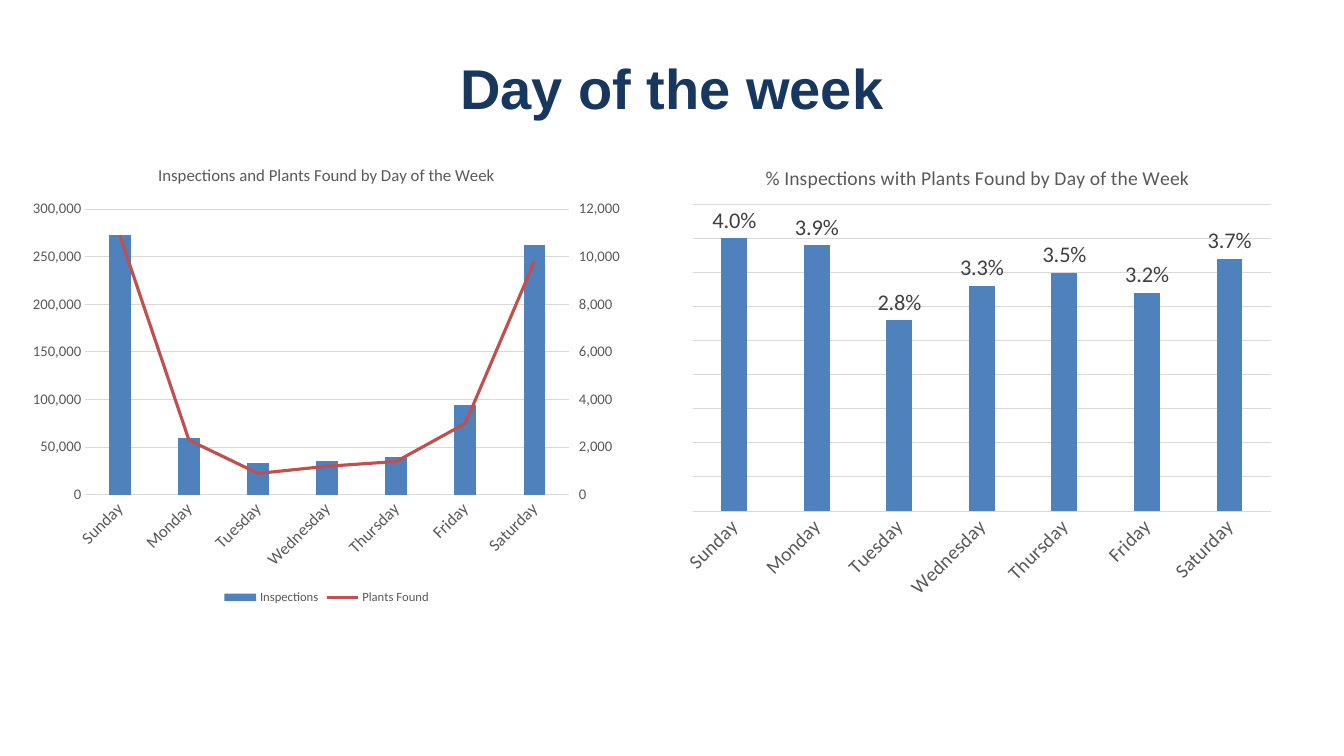
from copy import deepcopy
from lxml.etree import SubElement
from pptx import Presentation
from pptx.chart.data import CategoryChartData
from pptx.dml.color import RGBColor
from pptx.enum.chart import (XL_CHART_TYPE, XL_LABEL_POSITION, XL_LEGEND_POSITION,
                             XL_MARKER_STYLE, XL_TICK_MARK)
from pptx.enum.text import MSO_ANCHOR, PP_ALIGN
from pptx.oxml import parse_xml
from pptx.oxml.ns import nsdecls, qn
from pptx.util import Pt

DAYS = ["Sunday", "Monday", "Tuesday", "Wednesday", "Thursday", "Friday", "Saturday"]
COUNTS = {
    "Inspections": [273000, 60000, 33000, 36000, 40000, 94000, 262000],
    "Plants Found": [10900, 2300, 900, 1200, 1400, 3000, 9800],
}
RATES = {"Series 1": [0.04, 0.039, 0.028, 0.033, 0.035, 0.032, 0.037]}
NAVY, BLUE, RED = "17375E", "4F81BD", "C0504D"
GRAY, DARK, PALE = "595959", "404040", "D9D9D9"


def rgb(code):
    return RGBColor.from_string(code)


def style(font, size, color, name="Calibri", bold=False):
    font.size, font.name, font.bold = Pt(size), name, bold
    font.color.rgb = rgb(color)


def rule(line, color, width):
    line.color.rgb = rgb(color)
    line.width = Pt(width)


def scale(axis, top, step):
    axis.minimum_scale, axis.maximum_scale, axis.major_unit = 0, top, step


def drop(node, tag):
    for child in node.findall(qn(tag)):
        node.remove(child)


def add_title(slide, box, text):
    frame = slide.shapes.add_textbox(*map(Pt, box)).text_frame
    frame.word_wrap = True
    frame.vertical_anchor = MSO_ANCHOR.MIDDLE
    para = frame.paragraphs[0]
    para.alignment = PP_ALIGN.CENTER
    run = para.add_run()
    run.text = text
    style(run.font, 40, NAVY, "Arial", True)


def place_plot(chart, area):
    """Fix the inner plot area as fractions of the chart."""
    plot = chart.element.find(".//" + qn("c:plotArea"))
    drop(plot, "c:layout")
    parts = "".join(f'<c:{key} val="{val}"/>' for key, val in zip("xywh", area))
    plot.insert(0, parse_xml(
        f'<c:layout {nsdecls("c")}><c:manualLayout><c:layoutTarget val="inner"/>'
        f'<c:xMode val="edge"/><c:yMode val="edge"/>{parts}</c:manualLayout></c:layout>'))


def add_bars(slide, box, title, size, series, area):
    """Column chart with the look that both charts share."""
    data = CategoryChartData()
    data.categories = DAYS
    for name, vals in series.items():
        data.add_series(name, vals)
    chart = slide.shapes.add_chart(
        XL_CHART_TYPE.COLUMN_CLUSTERED, *map(Pt, box), data).chart
    style(chart.font, 10, "000000")
    chart.has_legend = False

    # Title
    chart.has_title = True
    run = chart.chart_title.text_frame.paragraphs[0].add_run()
    run.text = title
    style(run.font, size, GRAY)
    chart.chart_title.include_in_layout = False

    # Axes
    cat, val = chart.category_axis, chart.value_axis
    cat.major_tick_mark = val.major_tick_mark = XL_TICK_MARK.NONE
    style(cat.tick_labels.font, size, GRAY)
    text = chart.element.find(".//" + qn("c:catAx")).find(qn("c:txPr"))
    text.find(qn("a:bodyPr")).set("rot", "-2700000")
    rule(cat.format.line, PALE, 0.75)
    rule(val.major_gridlines.format.line, PALE, 0.75)
    val.format.line.fill.background()

    # Columns
    plot = chart.plots[0]
    plot.gap_width = 219
    plot.vary_by_categories = False
    fill = plot.series[0].format.fill
    fill.solid()
    fill.fore_color.rgb = rgb(BLUE)
    place_plot(chart, area)
    return chart


def move_line(chart, top, step):
    """Turn the last series into a line on a right-hand axis."""
    area = chart.element.find(".//" + qn("c:plotArea"))
    bars = area.find(qn("c:barChart"))
    line = parse_xml(f'<c:lineChart {nsdecls("c")}><c:grouping val="standard"/>'
                     '<c:varyColors val="0"/></c:lineChart>')
    ser = bars.findall(qn("c:ser"))[-1]
    drop(ser, "c:invertIfNegative")
    line.append(ser)
    SubElement(line, qn("c:marker")).set("val", "1")
    bars.addnext(line)

    # Second pair of axes, modelled on the first
    cat, val = (deepcopy(area.find(qn(tag))) for tag in ("c:catAx", "c:valAx"))
    for axis, own, other in ((cat, "501", "502"), (val, "502", "501")):
        SubElement(line, qn("c:axId")).set("val", own)
        axis.find(qn("c:axId")).set("val", own)
        axis.find(qn("c:crossAx")).set("val", other)
    cat.find(qn("c:delete")).set("val", "1")
    drop(val, "c:majorGridlines")
    for tag, new in (("axPos", "r"), ("majorTickMark", "out"),
                     ("crosses", "max"), ("majorUnit", str(step))):
        val.find(qn("c:" + tag)).set("val", new)
    val.find(qn("c:scaling")).find(qn("c:max")).set("val", str(top))
    area.findall(qn("c:valAx"))[-1].addnext(val)
    val.addnext(cat)

    found = chart.plots[1].series[0]
    rule(found.format.line, RED, 2.25)
    found.marker.style = XL_MARKER_STYLE.NONE
    found.smooth = False


def add_counts(slide, box):
    chart = add_bars(slide, box, "Inspections and Plants Found by Day of the Week",
                     12, COUNTS, (0.105, 0.136, 0.792, 0.618))
    val = chart.value_axis
    style(val.tick_labels.font, 10.5, GRAY)
    val.tick_labels.number_format = "#,##0"
    val.tick_labels.number_format_is_linked = False
    scale(val, 300000, 50000)
    move_line(chart, 12000, 2000)
    chart.has_legend = True
    chart.legend.position = XL_LEGEND_POSITION.BOTTOM
    chart.legend.include_in_layout = False
    style(chart.legend.font, 9, GRAY)


def add_rates(slide, box):
    chart = add_bars(slide, box, "% Inspections with Plants Found by Day of the Week",
                     14, RATES, (0.034, 0.126, 0.946, 0.663))
    scale(chart.value_axis, 0.045, 0.005)
    chart.value_axis.visible = False
    plot = chart.plots[0]
    plot.overlap = -27
    labels = plot.series[0].data_labels
    labels.show_value = True
    labels.number_format = "0.0%"
    labels.number_format_is_linked = False
    labels.position = XL_LABEL_POSITION.OUTSIDE_END
    style(labels.font, 16, DARK)


def main():
    deck = Presentation()
    deck.slide_width, deck.slide_height = Pt(960), Pt(540)
    slide = deck.slides.add_slide(deck.slide_layouts[6])
    top, wide, high = 104.4, 436.3, 330.5
    add_title(slide, (288.7, 28.8, 382.3, 66.2), "Day of the week")
    add_counts(slide, (15.1, top, wide, high))
    add_rates(slide, (480.2, top, wide, high))
    deck.save("out.pptx")


if __name__ == "__main__":
    main()
